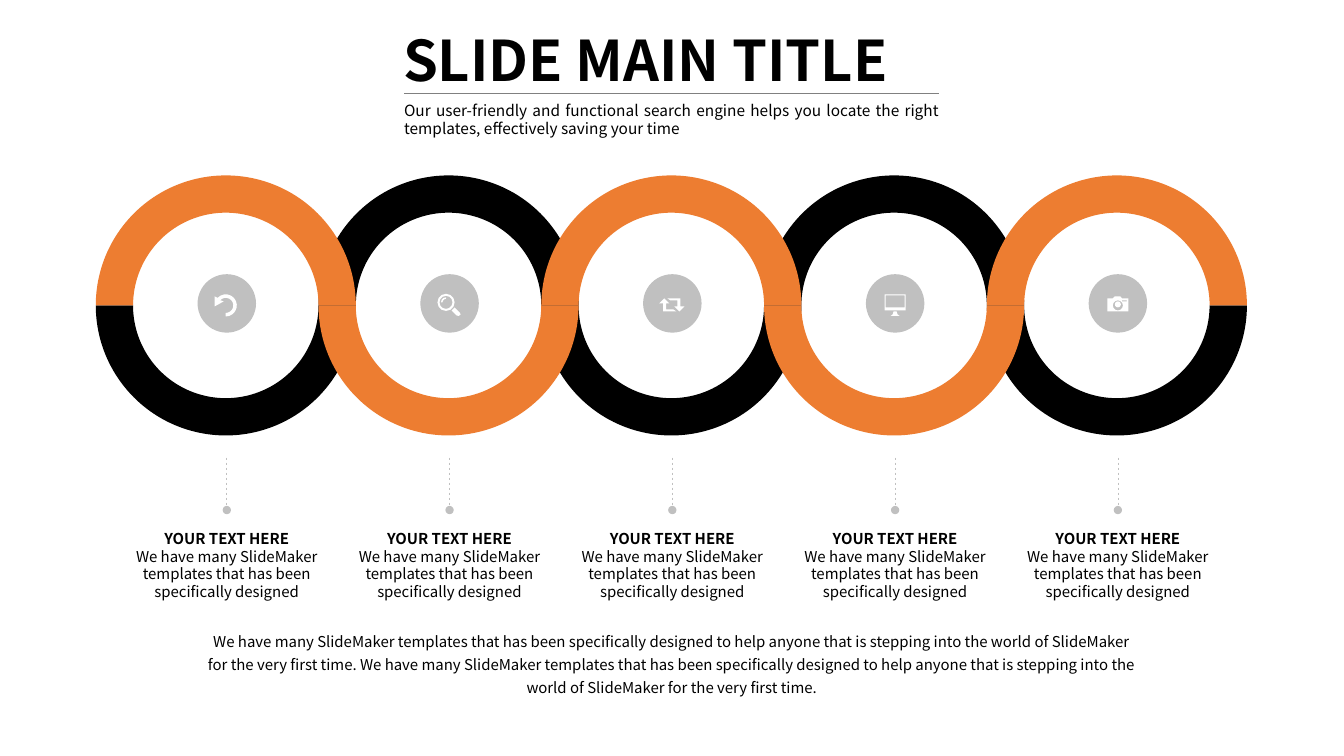
from math import cos, sin, radians
from lxml.etree import SubElement
from pptx import Presentation
from pptx.dml.color import RGBColor
from pptx.enum.dml import MSO_LINE as Dash
from pptx.enum.shapes import MSO_CONNECTOR as Link, MSO_SHAPE as Form
from pptx.enum.text import MSO_AUTO_SIZE as Auto, PP_ALIGN as Align
from pptx.oxml.ns import qn
from pptx.util import Inches, Pt

BLACK, ORANGE, GREY, WHITE = "000000", "ED7D31", "C0C0C0", "FFFFFF"
FONT = "Noto Sans CJK SC"
WIDE, HIGH = 133.33, 75  # grid of square cells, a tenth of an inch each
STEP, COUNT = 22.1, 5
RING_X, RING_Y, OUTER, INNER = 22.4, 30.3, 12.9, 9.2
DISC_X, DISC_Y, DISC_R = 22.5, 30.1, 2.9

LABEL = "YOUR TEXT HERE"
NOTE = "We have many SlideMaker templates that has been specifically designed"
CLAIM = (NOTE + " to help anyone that is stepping into the world of SlideMaker"
         " for the very first time.")
LEAD = ("Our user-friendly and functional search engine helps you locate"
        " the right templates, effectively saving your time")


def cell(num):
    return Inches(num / 10)


def color(code):
    return RGBColor.from_string(code)


def put(item, **vals):
    for key, val in vals.items():
        setattr(item, key, val)


def arc(x, y, rad, start, end, parts=12):
    """Points along an arc, angles in degrees, clockwise from the right."""
    turns = [radians(start + (end - start) * i / parts)
             for i in range(parts + 1)]
    return [(x + rad * cos(t), y + rad * sin(t)) for t in turns]


def rect(left, top, right, low):
    return [(left, top), (right, top), (right, low), (left, low)]


class Board:
    def __init__(self, slide):
        self.shapes = slide.shapes

    def paint(self, shape, fill):
        shape.shadow.inherit = False
        shape.fill.solid()
        shape.fill.fore_color.rgb = color(fill)
        shape.line.fill.background()

    def disc(self, x, y, rad, fill, form=Form.OVAL, tweaks=()):
        shape = self.shapes.add_shape(form, cell(x - rad), cell(y - rad),
                                      cell(2 * rad), cell(2 * rad))
        for i, val in enumerate(tweaks):
            shape.adjustments[i] = val
        self.paint(shape, fill)

    def ring(self, x, y, big, small, fill, start, end):
        """Part of a ring, clockwise between two angles in degrees."""
        self.disc(x, y, big, fill, Form.BLOCK_ARC,
                  (start * .6, end * .6, (big - small) / (2 * big)))

    def trace(self, x, y, loops, fill):
        """Fill closed outlines as one shape; inner outlines are holes."""
        pen = None
        for loop in loops:
            first, *rest = [(cell(x + a), cell(y + b)) for a, b in loop]
            if pen is None:
                pen = self.shapes.build_freeform(*first, scale=1.0)
            else:
                pen.move_to(*first)
            pen.add_line_segments(rest, close=True)
        self.paint(pen.convert_to_shape(), fill)

    def line(self, x1, y1, x2, y2, tint, width, dash=None, tail=None):
        link = self.shapes.add_connector(
            Link.STRAIGHT, cell(x1), cell(y1), cell(x2), cell(y2))
        link.line.color.rgb = color(tint)
        put(link.line, width=Pt(width), dash_style=dash)
        if tail:
            SubElement(link.line._get_or_add_ln(), qn("a:tailEnd"), type=tail)
        SubElement(link._element.spPr, qn("a:effectLst"))

    def text(self, x, y, w, h, rows, size, align, gap=None):
        """Rows are pairs of wording and bold."""
        frame = self.shapes.add_textbox(
            cell(x), cell(y), cell(w), cell(h)).text_frame
        put(frame, word_wrap=True, auto_size=Auto.SHAPE_TO_FIT_TEXT)
        for i, (words, bold) in enumerate(rows):
            para = frame.add_paragraph() if i else frame.paragraphs[0]
            put(para, alignment=align, line_spacing=gap)
            run = para.add_run()
            run.text = words
            put(run.font, name=FONT, size=Pt(size), bold=bold)
            run.font.color.rgb = color(BLACK)


def undo(board, x, y):
    board.trace(x, y, [arc(-.1, .2, 1.1, -137, 90)
                       + arc(-.1, .2, .75, 90, -137)
                       + [(-.3, -.2), (-1.2, .3), (-1.2, -.7)]], WHITE)


def search(board, x, y):
    board.trace(x, y, [[(.5, .4), (1, .9), (1.1, 1.1), (.9, 1.25),
                        (.7, 1.2), (.2, .7)]], WHITE)
    board.disc(x - .35, y - .1, .85, WHITE, Form.DONUT, [.12])
    board.ring(x - .35, y - .1, .5, .35, WHITE, 180, 270)


def cycle(board, x, y):
    hook = [(-.5, -.5), (.8, -.5), (.8, .3), (1.2, .3), (.7, .8),
            (.2, .3), (.5, .3), (.5, -.3), (-.2, -.3)]
    turned = [(-.1 - a, .3 - b) for a, b in hook]
    for loop in (hook, turned):
        board.trace(x, y, [loop], WHITE)


def screen(board, x, y):
    stand = [(-.15, .8), (.15, .8), (.25, 1.1), (.45, 1.25),
             (-.45, 1.25), (-.25, 1.1)]
    board.trace(x, y, [rect(-1.05, -.9, 1.05, .7),
                       rect(-.95, -.8, .95, .4), stand], WHITE)


def camera(board, x, y):
    body = [(-1.05, -.5), (-.5, -.5), (-.3, -.7), (.25, -.7), (.4, -.5),
            (1.05, -.5), (1.05, .8), (-1.05, .8)]
    board.disc(x, y + .1, .3, WHITE)
    board.trace(x, y, [body, arc(0, .2, .5, 0, 360),
                       rect(.4, -.3, .9, -.2)], WHITE)


def main():
    deck = Presentation()
    put(deck, slide_width=cell(WIDE), slide_height=cell(HIGH))
    board = Board(deck.slides.add_slide(deck.slide_layouts[6]))

    for i in range(COUNT):
        board.disc(DISC_X + i * STEP, DISC_Y, DISC_R, GREY)
    for tint, odd in ((BLACK, 0), (ORANGE, 1)):
        for i in range(COUNT):
            start = 180 * ((i + odd) % 2)
            board.ring(RING_X + i * STEP, RING_Y, OUTER, INNER, tint,
                       start, (start + 180) % 360)
    for i, icon in enumerate((undo, search, cycle, screen, camera)):
        x = DISC_X + i * STEP
        icon(board, x, DISC_Y)
        board.text(x - 11, 52, 22, 8.2, [(LABEL, True), (NOTE, False)],
                   10.7, Align.CENTER)
        board.line(x, 45.4, x, 50.6, GREY, .5, Dash.DASH, "oval")

    board.text(19.4, 61.7, 94.5, 8, [(f"{CLAIM} {CLAIM}", False)],
               10.7, Align.CENTER, 1.3)
    board.text(39, 2, 55.3, 7.8, [("SLIDE MAIN TITLE", True)],
               40, Align.JUSTIFY)
    board.text(39.1, 9.5, 55.1, 4.7, [(LEAD, False)], 11, Align.JUSTIFY)
    board.line(40.1, 9.3, 93.2, 9.3, "808080", 1)
    deck.save("out.pptx")


if __name__ == "__main__":
    main()
